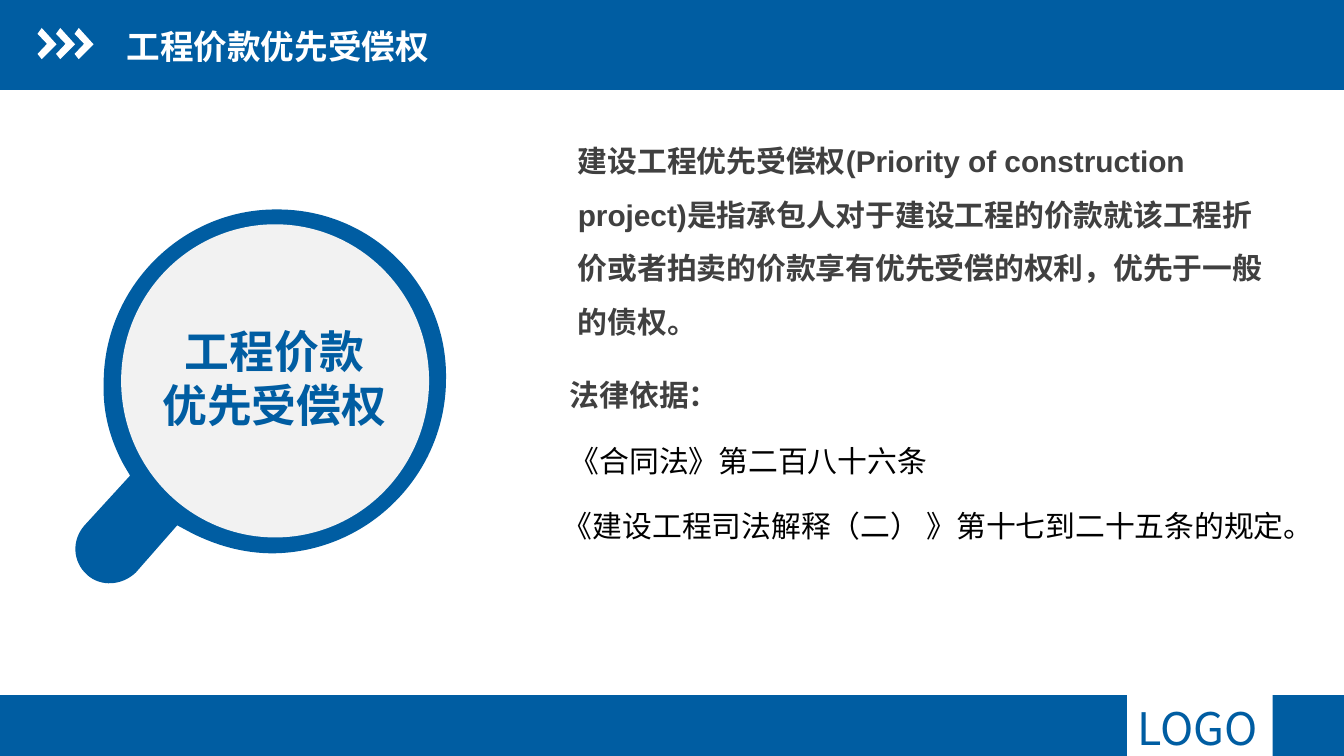
from dataclasses import dataclass

import pptx
import pptx.dml.color
import pptx.enum.shapes
import pptx.enum.text
import pptx.oxml
import pptx.oxml.ns
import pptx.util

Cm, Pt = pptx.util.Cm, pptx.util.Pt
RGB = pptx.dml.color.RGBColor
Shape = pptx.enum.shapes.MSO_SHAPE
Align = pptx.enum.text.PP_ALIGN
Anchor = pptx.enum.text.MSO_ANCHOR
NAMESPACE = pptx.oxml.ns.nsdecls("a")


@dataclass(frozen=True)
class Theme:
    blue: RGB = RGB(0x00, 0x5D, 0xA2)
    white: RGB = RGB(0xFF, 0xFF, 0xFF)
    lens: RGB = RGB(0xF2, 0xF2, 0xF2)
    grey: RGB = RGB(0x40, 0x40, 0x40)
    black: RGB = RGB(0x00, 0x00, 0x00)
    title_size: int = 18
    label_size: int = 24
    body_size: int = 16
    latin: str = "Arial"
    asian: str = "Noto Sans CJK SC"


theme = Theme()


def paint(shape, color):
    shape.shadow.inherit = False
    shape.fill.solid()
    shape.fill.fore_color.rgb = color
    shape.line.fill.background()


def write(box, lines, size, colors, bolds, margins, font=theme.latin, align=Align.LEFT):
    """Fill a box with one paragraph per line; margins are left, top, right, bottom in cm."""
    frame = box.text_frame
    frame.text = "\n".join(lines)
    frame.word_wrap = True
    frame.auto_size = pptx.enum.text.MSO_AUTO_SIZE.NONE
    frame.vertical_anchor = Anchor.TOP
    frame.margin_left, frame.margin_top, frame.margin_right, frame.margin_bottom = map(Cm, margins)
    for para, color, bold in zip(frame.paragraphs, colors, bolds):
        para.alignment = align
        para.space_before = Pt(0)
        for span in para.runs:
            span.font.size = Pt(size)
            span.font.bold = bold
            span.font.name = font
            span.font.color.rgb = color
            span._r.get_or_add_rPr().append(
                pptx.oxml.parse_xml(f'<a:ea {NAMESPACE} typeface="{theme.asian}"/>'))
    return frame


deck = pptx.Presentation()
deck.slide_width, deck.slide_height = Cm(25.4), Cm(14.29)
page = deck.slides.add_slide(deck.slide_layouts[1])
title, legal_basis = page.placeholders

# Header and footer bands
for left, top, width, height in [(0, 0, 25.4, 1.7), (0, 13.14, 21.3, 1.15), (24.05, 13.14, 1.35, 1.15)]:
    band = page.shapes.add_shape(Shape.RECTANGLE, Cm(left), Cm(top), Cm(width), Cm(height))
    paint(band, theme.blue)

# Outlines as segments: one point is a line, three points are a curve
chevron = [(0.71, 0.64), (0.79, 0.53), (1.07, 0.84), (0.79, 1.12), (0.71, 1.02), (0.89, 0.83)]
magnifier = [
    [(5.21, 3.96)],
    [(3.43, 3.96), (1.96, 5.44), (1.96, 7.24)],
    [(1.94, 7.8), (2.08, 8.31), (2.34, 8.79)],
    [(2.46, 8.99)],
    [(1.6, 9.93)],
    [(1.35, 10.21), (1.37, 10.62), (1.65, 10.87)],
    [(1.91, 11.1), (2.31, 11.07), (2.57, 10.82)],
    [(3.35, 9.93)],
    [(3.63, 10.08)],
    [(4.09, 10.31), (4.6, 10.46), (5.16, 10.46)],
    [(6.96, 10.44), (8.43, 8.97), (8.43, 7.16)],
    [(8.46, 5.38), (7.01, 3.94), (5.21, 3.96)],
]
outlines = [([[(x + 0.35 * step, y)] for x, y in chevron], theme.white) for step in range(3)]
outlines.append((magnifier, theme.blue))

for segments, color in outlines:
    points = [(Cm(x), Cm(y)) for segment in segments for x, y in segment]
    builder = page.shapes.build_freeform(*points[0], scale=1.0)
    builder.add_line_segments(points[1:], close=True)
    outline = builder.convert_to_shape()
    paint(outline, color)
    drawn = iter(outline.element.xpath(".//a:path/*"))
    for segment in segments:
        steps = [next(drawn) for point in segment]
        if len(steps) == 3:
            curve = pptx.oxml.parse_xml(f"<a:cubicBezTo {NAMESPACE}/>")
            steps[0].addprevious(curve)
            for step in steps:
                curve.append(step[0])
                step.getparent().remove(step)

lens = page.shapes.add_shape(Shape.OVAL, Cm(2.29), Cm(4.24), Cm(5.82), Cm(5.92))
paint(lens, theme.lens)

# The title lies on the header band
page.shapes.element.append(title.element)
title.left, title.top, title.width, title.height = Cm(2.39), Cm(0.34), Cm(9), Cm(1.07)
write(title, ["工程价款优先受偿权"], theme.title_size, [theme.white], [True],
      (0, 0.13, 0, 0.13)).vertical_anchor = Anchor.MIDDLE

label = page.shapes.add_textbox(Cm(2.72), Cm(5.94), Cm(4.93), Cm(2.39))
write(label, ["工程价款", "优先受偿权"], theme.label_size, [theme.blue] * 2, [True] * 2,
      (0.33, 0.18, 0.33, 0.18), align=Align.CENTER)

logo = page.shapes.add_textbox(Cm(21.25), Cm(13.11), Cm(2.95), Cm(1.27))
write(logo, ["LOGO"], theme.label_size, [theme.blue], [False],
      (0.25, 0.13, 0.25, 0.13), font=theme.asian).word_wrap = False

# Definition and legal basis
body_margins = (0, 0.36, 0.48, 0.25)
definition = page.shapes.add_textbox(Cm(10.92), Cm(2), Cm(13.69), Cm(4.4))
definition_frame = write(
    definition,
    ["建设工程优先受偿权(Priority of construction project)是指承包人对于建设工程的价款"
     "就该工程折价或者拍卖的价款享有优先受偿的权利，优先于一般的债权。"],
    theme.body_size, [theme.grey], [True], body_margins)

legal_basis.left, legal_basis.top = Cm(10.52), Cm(6.42)
legal_basis.width, legal_basis.height = Cm(14.88), Cm(4.4)
legal_frame = write(
    legal_basis,
    ["法律依据：", "《合同法》第二百八十六条", "《建设工程司法解释（二） 》第十七到二十五条的规定。"],
    theme.body_size, [theme.grey, theme.black, theme.black], [True, False, False], body_margins)

for para, indent in zip(legal_frame.paragraphs, [0.25, 0.25, 0.12]):
    properties = para._p.get_or_add_pPr()
    properties.set("marL", str(Cm(indent)))
    properties.set("indent", "0")
    properties.append(pptx.oxml.parse_xml(f"<a:buNone {NAMESPACE}/>"))

for para in [*definition_frame.paragraphs, *legal_frame.paragraphs]:
    para.line_spacing = 1.5
    para.space_after = Pt(6.4)

deck.save("out.pptx")
